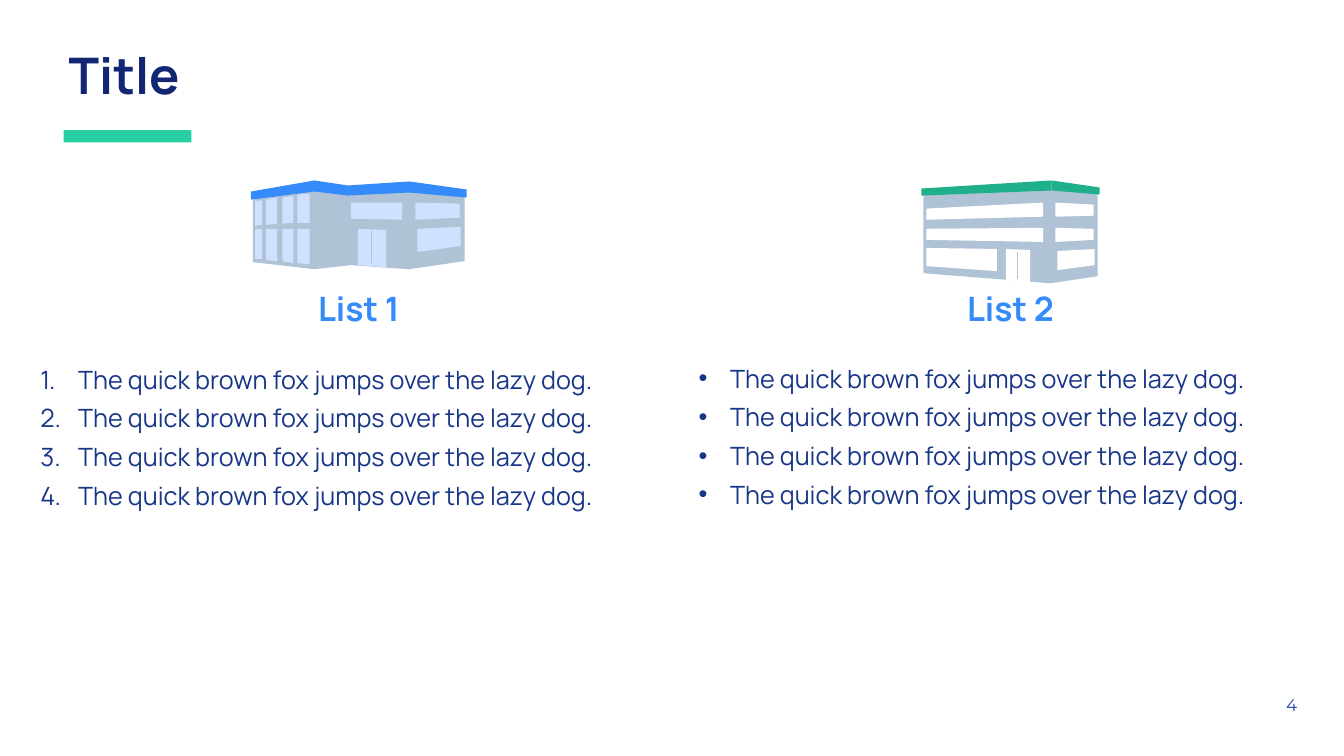
import pptx
import pptx.dml.color
import pptx.enum.shapes
import pptx.enum.text
import pptx.oxml.ns
import pptx.util
from lxml import etree

Pt = pptx.util.Pt
ALIGN = pptx.enum.text.PP_ALIGN
ANCHOR = pptx.enum.text.MSO_ANCHOR
NAVY, INK, BLUE = "132673", "183687", "368BFB"
STONE, GLASS, WHITE = "AFC2D6", "CFE1FE", "FFFFFF"
MINT, GREEN, PAGE_BLUE = "27CEA4", "1FB08B", "2345B2"
BUILDING_UNIT = 0.72
SENTENCE = "The quick brown fox jumps over the lazy dog."


def paint(target, colour):
    target.rgb = pptx.dml.color.RGBColor.from_string(colour)


def fill_plain(shape, colour):
    shape.shadow.inherit = False
    shape.fill.solid()
    paint(shape.fill.fore_color, colour)
    shape.line.fill.background()


def place(shape, box):
    shape.left, shape.top, shape.width, shape.height = map(Pt, box)


def prepare_frame(shape, anchor, wrap=True):
    frame = shape.text_frame
    frame.margin_left = frame.margin_right = Pt(3.6)
    frame.margin_top = frame.margin_bottom = Pt(3.6)
    frame.auto_size = pptx.enum.text.MSO_AUTO_SIZE.NONE
    frame.word_wrap = wrap
    frame.vertical_anchor = anchor
    return frame


def style(para, size, colour, align=ALIGN.LEFT, name="Manrope", bold=False, before=0):
    para.alignment = align
    para.space_before = Pt(before)
    para.font.size = Pt(size)
    para.font.name = name
    para.font.bold = bold
    paint(para.font.color, colour)


def add_bullet(para, indent, tag, **attributes):
    properties = para._p.get_or_add_pPr()
    properties.set("marL", str(Pt(indent)))
    properties.set("indent", str(-Pt(indent)))
    font = etree.SubElement(properties, pptx.oxml.ns.qn("a:buFont"))
    font.set("typeface", "Arial" if tag == "a:buChar" else "Manrope")
    etree.SubElement(properties, pptx.oxml.ns.qn(tag), **attributes)


def draw_header(page, box):
    left, top, width, height = box
    title = page.shapes.title
    place(title, box)
    frame = prepare_frame(title, ANCHOR.MIDDLE)
    frame.text = "Title"
    para = frame.paragraphs[0]
    style(para, 36, NAVY, bold=True)
    para.line_spacing = 0.9
    bar = page.shapes.add_shape(pptx.enum.shapes.MSO_SHAPE.RECTANGLE, 0, 0, 0, 0)
    place(bar, (left, top + height, 91.4, 8.8))
    fill_plain(bar, MINT)


def draw_heading(placeholder, box, text):
    place(placeholder, box)
    frame = prepare_frame(placeholder, ANCHOR.TOP)
    frame.text = text
    style(frame.paragraphs[0], 24, BLUE, ALIGN.CENTER, bold=True)


def draw_list(placeholder, box, indent, tag, **attributes):
    place(placeholder, box)
    frame = prepare_frame(placeholder, ANCHOR.TOP)
    frame.text = "\n".join([SENTENCE] * 4)
    for index, para in enumerate(frame.paragraphs):
        add_bullet(para, indent, tag, **attributes)
        style(para, 18, INK, before=6 if index else 0)


def draw_page_number(page, box):
    number = page.shapes.add_textbox(0, 0, 0, 0)
    place(number, box)
    frame = prepare_frame(number, ANCHOR.MIDDLE, wrap=False)
    frame.text = "4"
    style(frame.paragraphs[0], 12, PAGE_BLUE, ALIGN.RIGHT, name="Montserrat")


def pane(left, right, top_left, top_right, bottom_right, bottom_left):
    return [(left, top_left), (right, top_right), (right, bottom_right), (left, bottom_left)]


def draw_building(page, left, top, layers):
    group = page.shapes.add_group_shape()
    for colour, outlines in layers:
        for outline in outlines:
            builder = group.shapes.build_freeform(*outline[0], scale=Pt(BUILDING_UNIT))
            builder.add_line_segments(outline[1:], close=True)
            fill_plain(builder.convert_to_shape(Pt(left), Pt(top)), colour)


def draw_blue_building(page, left, top):
    wall = [(186, 9), (97, 13), (63, 9), (10, 17), (2, 19), (2, 81), (63, 88),
            (99, 84), (157, 88), (212, 80), (212, 15)]
    roof = [(157, 1), (96, 5), (63, 0), (0, 11), (0, 19), (63, 11), (96, 15),
            (157, 12), (214, 17), (214, 9)]
    front = [(163, 207, 22, 23, 37, 39), (165, 208, 48, 46, 65, 71),
             (106, 134, 48, 49, 86, 84), (99, 150, 22, 22, 39, 38)]
    upper_side = [(4, 11, 20, 20, 44, 45), (15, 26, 19, 17, 43, 44),
                  (31, 42, 17, 15, 42, 43), (46, 58, 14, 13, 42, 42)]
    lower_side = [(4, 11, 48, 48, 78, 78), (15, 26, 48, 48, 80, 79),
                  (31, 42, 48, 48, 82, 80), (46, 58, 48, 48, 83, 82)]
    windows = [pane(*edges) for edges in front + upper_side + lower_side]
    door_gap = pane(119, 120, 50, 50, 82, 82)
    draw_building(page, left, top, [
        (STONE, [wall]), (GLASS, windows), (BLUE, [roof]), (STONE, [door_gap])])


def draw_green_building(page, left, top):
    wall = [(175, 12), (175, 95), (128, 102), (2, 92), (2, 14), (153, 7)]
    openings = [(5, 121, 48, 47, 61, 59), (5, 121, 28, 22, 36, 39),
                (5, 75, 67, 68, 90, 85), (133, 171, 47, 48, 59, 61),
                (133, 171, 22, 24, 35, 36), (135, 172, 70, 68, 84, 89),
                (84, 108, 68, 69, 101, 99)]
    windows = [pane(*edges) for edges in openings]
    roof = [pane(0, 129, 8, 0, 10, 15), pane(129, 177, 0, 7, 14, 10)]
    door_gap = pane(95, 96, 71, 71, 98, 98)
    draw_building(page, left, top, [
        (STONE, [wall]), (WHITE, windows), (GREEN, roof), (STONE, [door_gap])])


def build_comparison(deck):
    page = deck.slides.add_slide(deck.slide_layouts[4])
    _, heading_one, list_one, heading_two, list_two = page.placeholders
    draw_header(page, (45.4, 19.4, 828, 73.5))
    draw_heading(heading_one, (95, 202.3, 322.6, 36), "List 1")
    draw_heading(heading_two, (640.8, 202.3, 162, 36), "List 2")
    draw_blue_building(page, 179.3, 128.9)
    draw_green_building(page, 658.1, 128.9)
    draw_list(list_one, (25.2, 256.3, 453.6, 118.8), 27, "a:buAutoNum", type="arabicPeriod")
    draw_list(list_two, (495.4, 255.6, 453.6, 118.8), 22.5, "a:buChar", char="•")
    draw_page_number(page, (913.7, 491, 16.6, 24.5))


def main():
    deck = pptx.Presentation()
    deck.slide_width, deck.slide_height = Pt(960), Pt(540)
    build_comparison(deck)
    deck.save("out.pptx")


if __name__ == "__main__":
    main()
